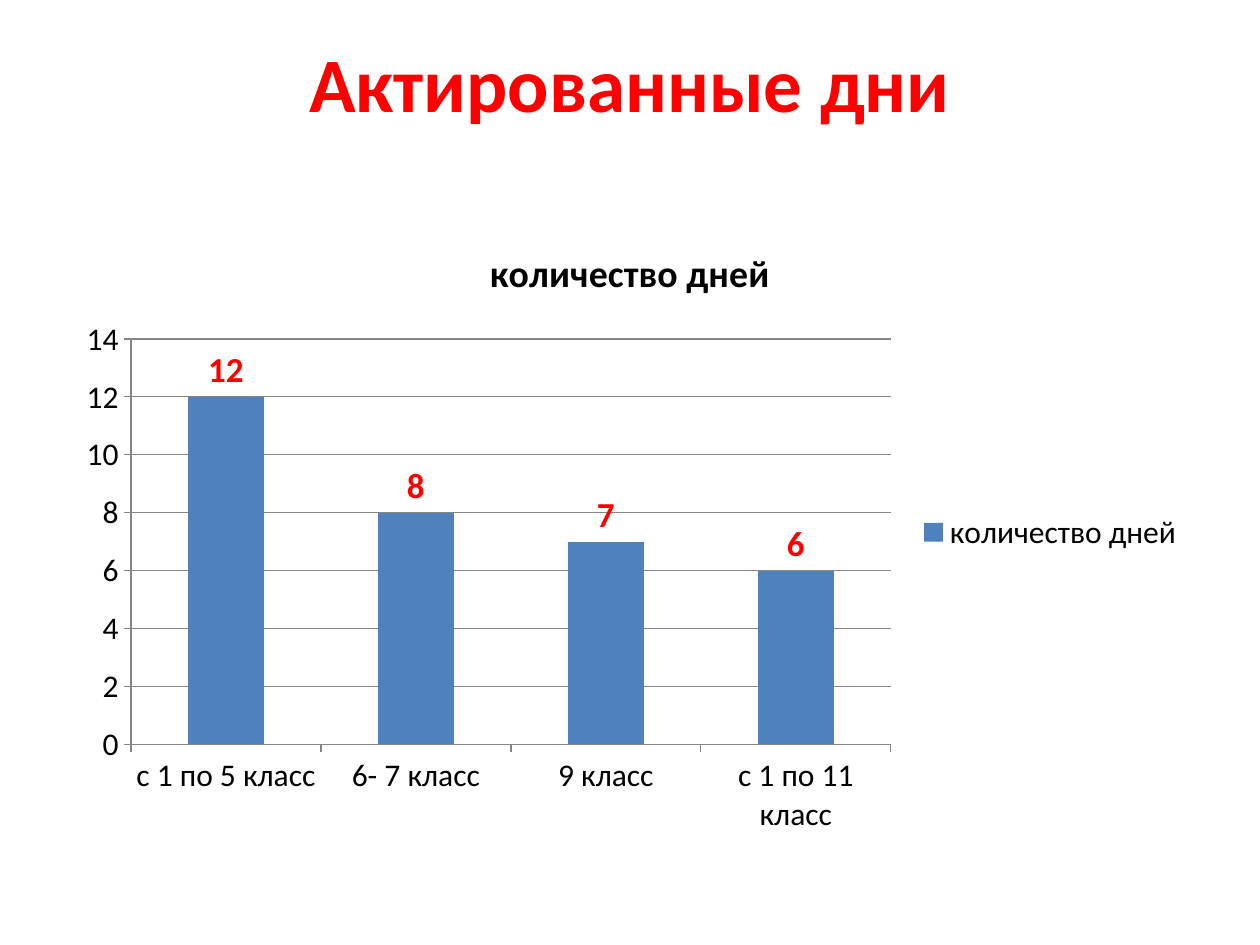
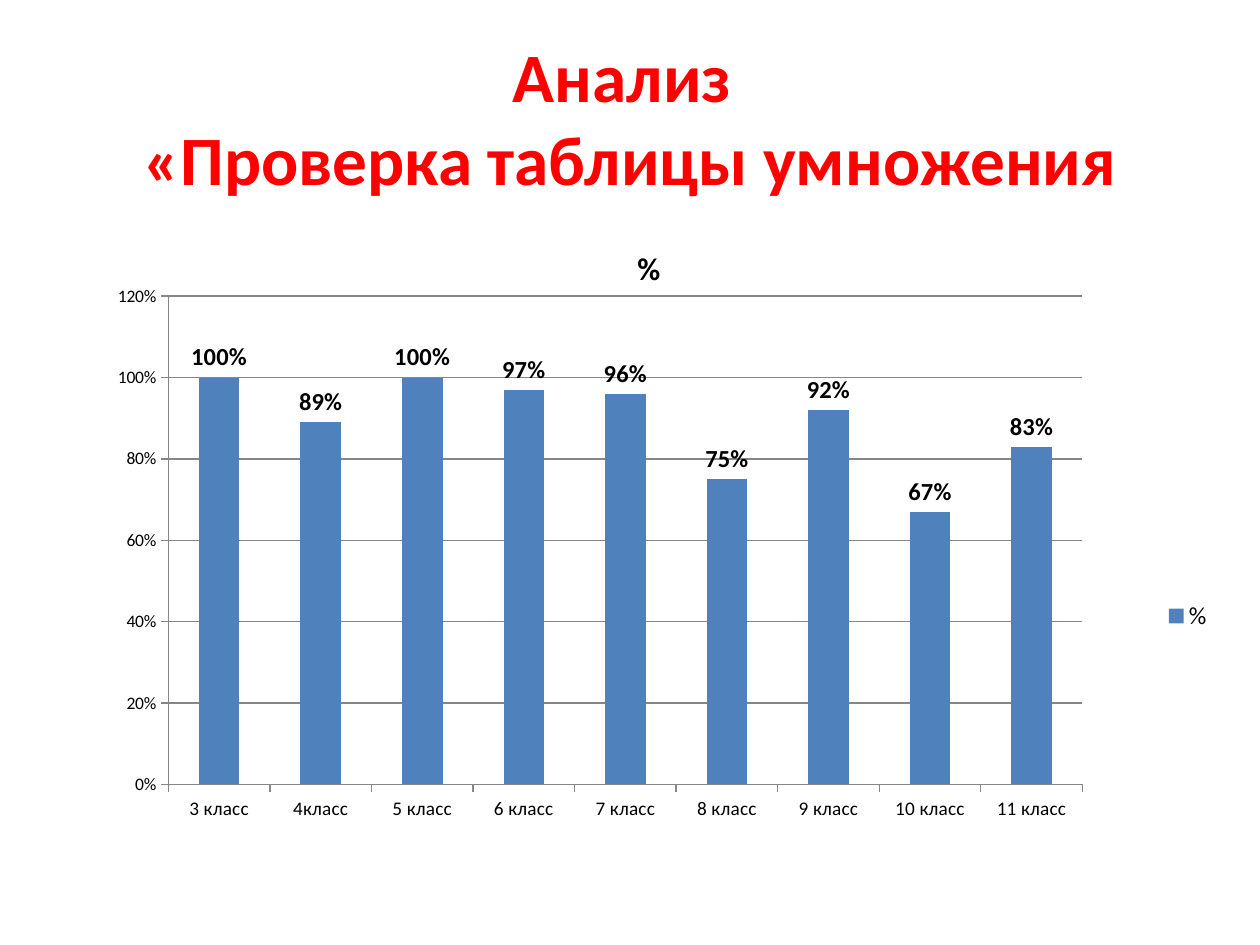
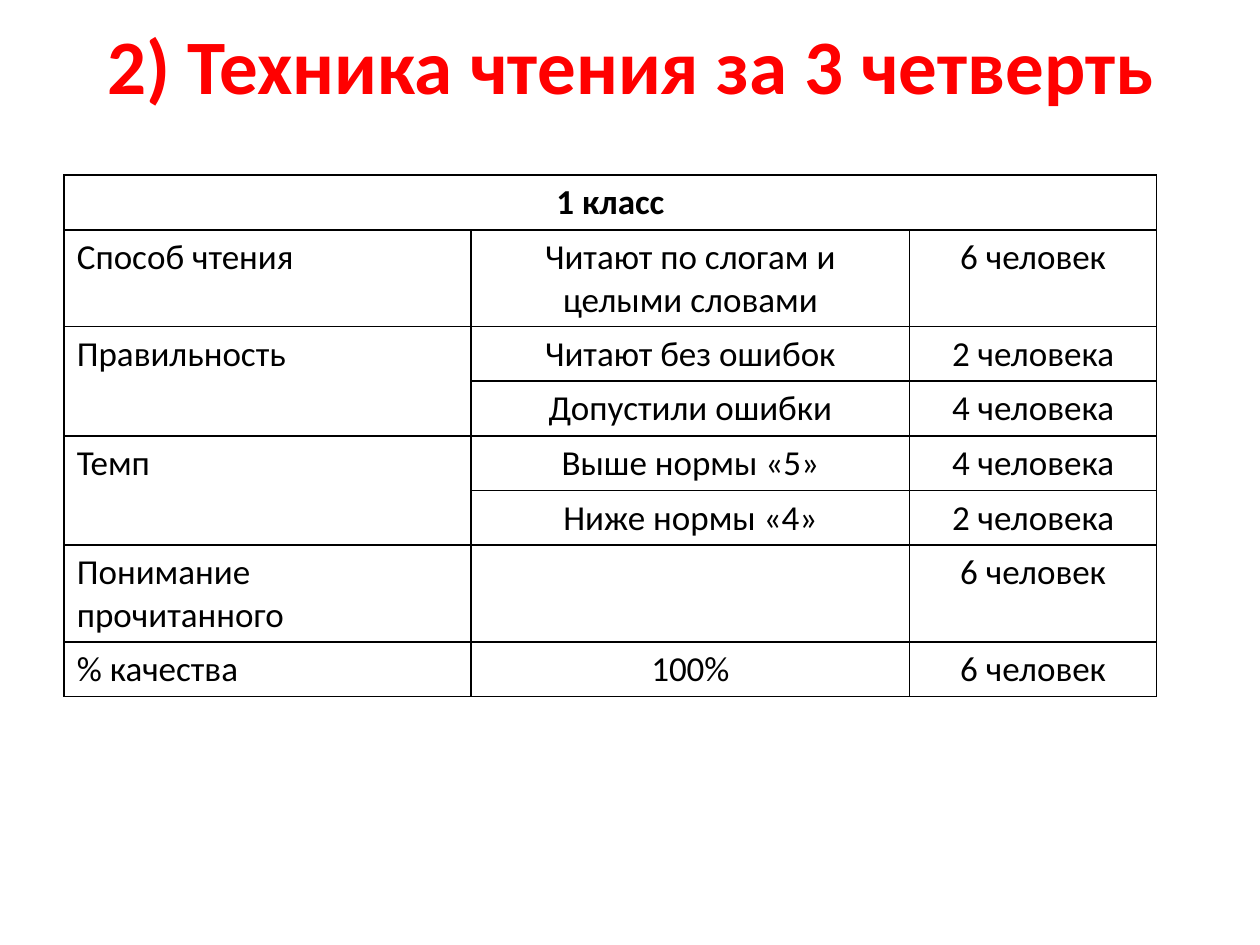
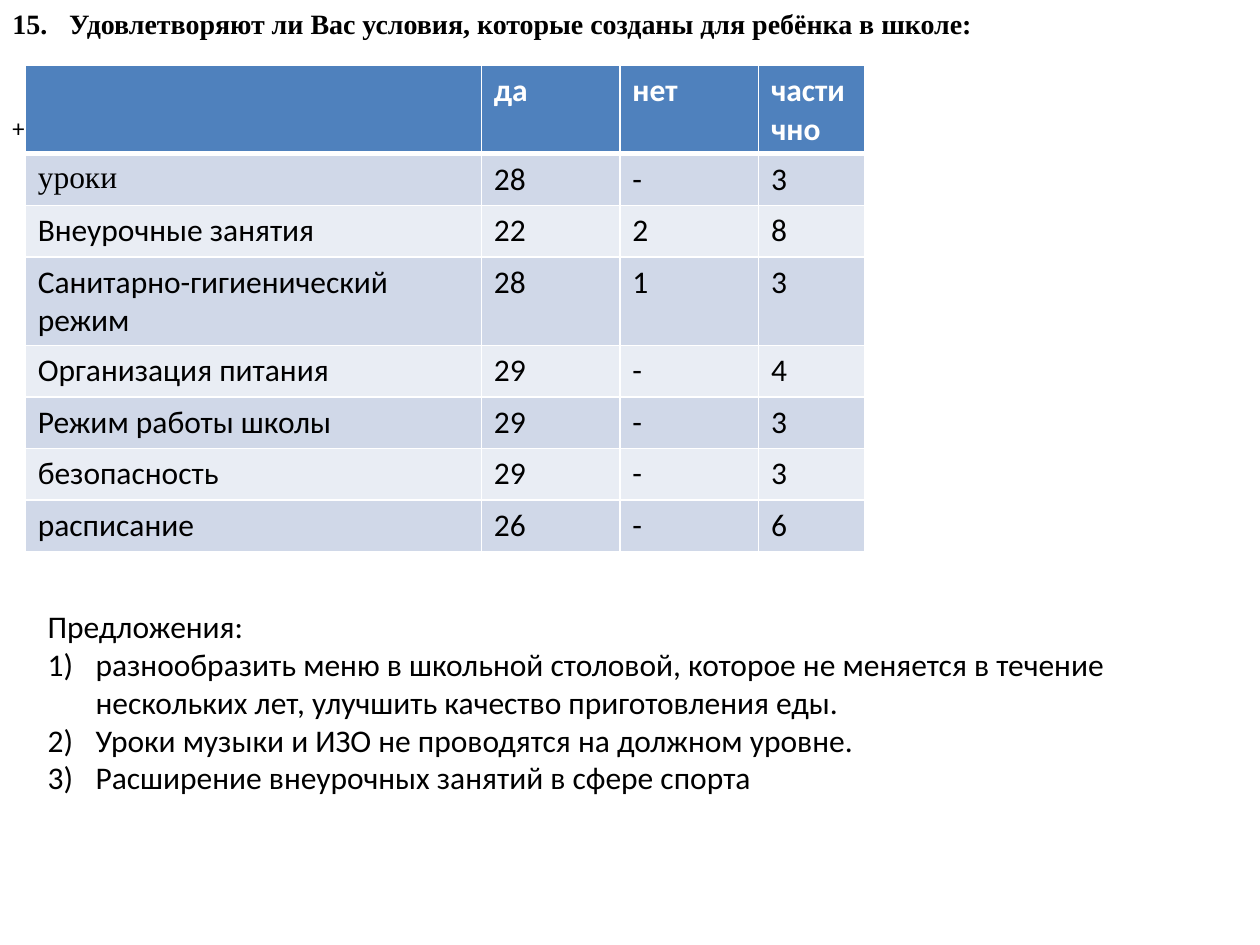
from lxml.etree import SubElement
from pptx import Presentation
from pptx.chart.data import CategoryChartData
from pptx.dml.color import RGBColor
from pptx.enum.chart import XL_CHART_TYPE as CT, XL_LABEL_POSITION as LP
from pptx.enum.chart import XL_LEGEND_POSITION as LEG, XL_TICK_MARK as TICK
from pptx.enum.text import MSO_ANCHOR, PP_ALIGN
from pptx.oxml import parse_xml
from pptx.oxml.ns import nsdecls, qn
from pptx.util import Inches, Pt

W, H = 10, 7.5
SANS, SERIF = "Calibri", "Times New Roman"
COLORS = {"title": "FF0000", "text": "000000", "bar": "4F81BD", "axis": "868686",
          "white": "FFFFFF", "band_odd": "D0D8E8", "band_even": "E9EDF4"}
LEFT, CENTER = PP_ALIGN.LEFT, PP_ALIGN.CENTER

# Content
DAYS = {
    "title": "Актированные дни", "title_at": (0.5, 0.3, 9, 0.69), "title_size": 44,
    "at": (0.5, 1.75, 9, 4.95), "name": "количество дней", "format": "General",
    "values": {"с 1 по 5 класс": 12, "6- 7 класс": 8, "9 класс": 7, "с 1 по 11 класс": 6},
    "max": 14, "step": 2, "plot": (0.06, 0.19, 0.67, 0.65), "legend": None,
    "sizes": {"title": 21.6, "cat": 18, "val": 18, "legend": 18, "label": 20},
    "label_color": "title",
}
TIMES_TABLE = {
    "title": "Анализ \v«Проверка таблицы умножения", "title_at": (0.5, 0.3, 9, 1.25),
    "title_size": 39.6,
    "at": (0.5, 1.75, 9.3, 5.46), "name": "%", "format": "0%",
    "values": {"3 класс": 1, "4класс": 0.89, "5 класс": 1, "6 класс": 0.97,
               "7 класс": 0.96, "8 класс": 0.75, "9 класс": 0.92, "10 класс": 0.67,
               "11 класс": 0.83},
    "max": 1.2, "step": 0.2, "plot": (0.09, 0.11, 0.78, 0.71),
    "legend": (0.93, 0.54, 0.06, 0.07),
    "sizes": {"title": 18, "cat": 11, "val": 10, "legend": 14, "label": 14},
    "label_color": "text",
}
READING_TITLE = "2) Техника чтения за 3 четверть"
READING = [
    ("1 класс", "", ""),
    ("Способ чтения", "Читают по слогам и целыми словами", "6 человек"),
    ("Правильность", "Читают без ошибок", "2 человека"),
    ("", "Допустили ошибки", "4 человека"),
    ("Темп", "Выше нормы «5»", "4 человека"),
    ("", "Ниже нормы «4»", "2 человека"),
    ("Понимание прочитанного", "", "6 человек"),
    ("% качества", "100%", "6 человек"),
]
READING_MERGES = [((0, 0), (0, 2)), ((2, 0), (3, 0)), ((4, 0), (5, 0))]
QUESTION = "15.\tУдовлетворяют ли Вас условия, которые созданы для ребёнка в школе:"
ANSWERS = [
    ("", "да", "нет", "частично"),
    ("уроки", "28", "-", "3"),
    ("Внеурочные занятия", "22", "2", "8"),
    ("Санитарно-гигиенический режим", "28", "1", "3"),
    ("Организация питания", "29", "-", "4"),
    ("Режим работы школы", "29", "-", "3"),
    ("безопасность", "29", "-", "3"),
    ("расписание", "26", "-", "6"),
]
SUGGESTIONS = [
    "Предложения:",
    "разнообразить меню в школьной столовой, которое не меняется в течение "
    "нескольких лет, улучшить качество приготовления еды.",
    "Уроки музыки и ИЗО не проводятся на должном уровне.",
    "Расширение внеурочных занятий в сфере спорта",
]


# Shared helpers
def rgb(name):
    return RGBColor.from_string(COLORS[name])


def box(at):
    return [Inches(v) for v in at]


def set_font(font, size, color="text", bold=False, name=SANS):
    font.size, font.bold, font.name = Pt(size), bold, name
    font.color.rgb = rgb(color)


def add_text(slide, at, paragraphs):
    tf = slide.shapes.add_textbox(*box(at)).text_frame
    tf.word_wrap = True
    for i, text in enumerate(paragraphs):
        p = tf.paragraphs[0] if i == 0 else tf.add_paragraph()
        p.text = text
    return tf


def add_title(slide, text, at, size=44):
    tf = add_text(slide, at, [text])
    tf.vertical_anchor = MSO_ANCHOR.MIDDLE
    p = tf.paragraphs[0]
    p.alignment = CENTER
    set_font(p.font, size, "title", True)


def hang(p, indent, numbered=False):
    pPr = p._p.get_or_add_pPr()
    pPr.set("marL", str(Inches(indent)))
    pPr.set("indent", str(-Inches(indent)))
    if numbered:
        bullet = parse_xml(f'<a:buAutoNum {nsdecls("a")} type="arabicParenR"/>')
        pPr.insert(0, bullet)


# Charts
def set_layout(part, shares, inner=False):
    old = part.find(qn("c:layout"))
    if old is not None:
        part.remove(old)
    target = '<c:layoutTarget val="inner"/>' if inner else ""
    modes = "".join(f'<c:{k}Mode val="edge"/>' for k in "xy")
    values = "".join(f'<c:{k} val="{v}"/>' for k, v in zip("xywh", shares))
    layout = parse_xml(f'<c:layout {nsdecls("c")}><c:manualLayout>{target}{modes}{values}'
                       '</c:manualLayout></c:layout>')
    position = part.find(qn("c:legendPos"))
    part.insert(0 if position is None else 1, layout)


def add_column_chart(slide, d):
    data = CategoryChartData(number_format=d["format"])
    data.categories = list(d["values"])
    data.add_series(d["name"], list(d["values"].values()))
    chart = slide.shapes.add_chart(CT.COLUMN_CLUSTERED, *box(d["at"]), data).chart
    sizes = d["sizes"]
    set_font(chart.font, sizes["val"])

    chart.has_title = True
    p = chart.chart_title.text_frame.paragraphs[0]
    p.text = d["name"]
    set_font(p.font, sizes["title"], bold=True)
    chart.chart_title.include_in_layout = False

    chart.has_legend = True
    legend = chart.legend
    legend.position, legend.include_in_layout = LEG.RIGHT, False
    set_font(legend.font, sizes["legend"])
    if d["legend"]:
        set_layout(legend._element, d["legend"])

    val = chart.value_axis
    val.minimum_scale, val.maximum_scale, val.major_unit = 0, d["max"], d["step"]
    val.tick_labels.number_format = d["format"]
    val.tick_labels.number_format_is_linked = False
    val.has_major_gridlines = True
    for axis, key in ((val, "val"), (chart.category_axis, "cat")):
        axis.major_tick_mark, axis.minor_tick_mark = TICK.OUTSIDE, TICK.NONE
        set_font(axis.tick_labels.font, sizes[key])
    for line in (val.format.line, chart.category_axis.format.line,
                 val.major_gridlines.format.line):
        line.color.rgb, line.width = rgb("axis"), Pt(0.75)

    plot = chart.plots[0]
    plot.gap_width, plot.vary_by_categories = 150, False
    fill = plot.series[0].format.fill
    fill.solid()
    fill.fore_color.rgb = rgb("bar")
    plot.has_data_labels = True
    labels = plot.data_labels
    labels.show_value, labels.position = True, LP.OUTSIDE_END
    labels.number_format, labels.number_format_is_linked = d["format"], False
    set_font(labels.font, sizes["label"], d["label_color"], True)
    set_layout(chart._chartSpace.chart.plotArea, d["plot"], inner=True)


# Tables
def set_borders(cell, color, bottom=1):
    tcPr = cell._tc.get_or_add_tcPr()
    for side in "LRTB":
        width = bottom if side == "B" else 1
        ln = SubElement(tcPr, qn(f"a:ln{side}"), w=str(Pt(width)))
        SubElement(SubElement(ln, qn("a:solidFill")), qn("a:srgbClr"), val=COLORS[color])


def add_grid(slide, left, top, widths, rows, style, row_height=0.41):
    """style(row, column) gives size, color, bold, font, align, fill, border, bottom."""
    at = (left, top, sum(widths), row_height * len(rows))
    table = slide.shapes.add_table(len(rows), len(widths), *box(at)).table
    table.first_row = table.horz_banding = False
    for column, width in zip(table.columns, widths):
        column.width = Inches(width)
    for r, row in enumerate(rows):
        for c, text in enumerate(row):
            size, color, bold, font, align, fill, border, bottom = style(r, c)
            cell = table.cell(r, c)
            cell.text = text
            p = cell.text_frame.paragraphs[0]
            p.alignment = align
            set_font(p.font, size, color, bold, font)
            set_borders(cell, border, bottom)
            if fill:
                cell.fill.solid()
                cell.fill.fore_color.rgb = rgb(fill)
            else:
                cell.fill.background()
    return table


def reading_style(r, c):
    align = CENTER if r == 0 or c else LEFT
    return 20, "text", r == 0, SANS, align, None, "text", 1


def answers_style(r, c):
    if r == 0:
        return 18, "white", True, SANS, LEFT, "bar", "white", 3
    font = SERIF if (r, c) == (1, 0) else SANS
    fill = "band_odd" if r % 2 else "band_even"
    return 18, "text", False, font, LEFT, fill, "white", 1


# Slides
def chart_slide(slide, d):
    add_title(slide, d["title"], d["title_at"], d["title_size"])
    add_column_chart(slide, d)


def reading_slide(slide):
    add_title(slide, READING_TITLE, (0.51, 0.02, 9, 0.97))
    table = add_grid(slide, 0.51, 1.39, (3.23, 3.48, 1.96), READING, reading_style)
    for first, last in READING_MERGES:
        table.cell(*first).merge(table.cell(*last))


def survey_slide(slide):
    question, mark = add_text(slide, (0, 0, W, H), [QUESTION, "+"]).paragraphs
    set_font(question.font, 16, bold=True, name=SERIF)
    hang(question, 0.45)
    set_font(mark.font, 14)
    mark.space_before = Pt(42)
    add_grid(slide, 0.2, 0.52, (3.62, 1.1, 1.1, 0.84), ANSWERS, answers_style)
    tf = add_text(slide, (0.28, 4.77, 8.82, 1.92), SUGGESTIONS)
    for i, p in enumerate(tf.paragraphs):
        set_font(p.font, 18)
        if i:
            hang(p, 0.38, numbered=True)


def main():
    prs = Presentation()
    prs.slide_width, prs.slide_height = Inches(W), Inches(H)
    blank = prs.slide_layouts[6]
    for d in (DAYS, TIMES_TABLE):
        chart_slide(prs.slides.add_slide(blank), d)
    reading_slide(prs.slides.add_slide(blank))
    survey_slide(prs.slides.add_slide(blank))
    prs.save("out.pptx")


if __name__ == "__main__":
    main()
